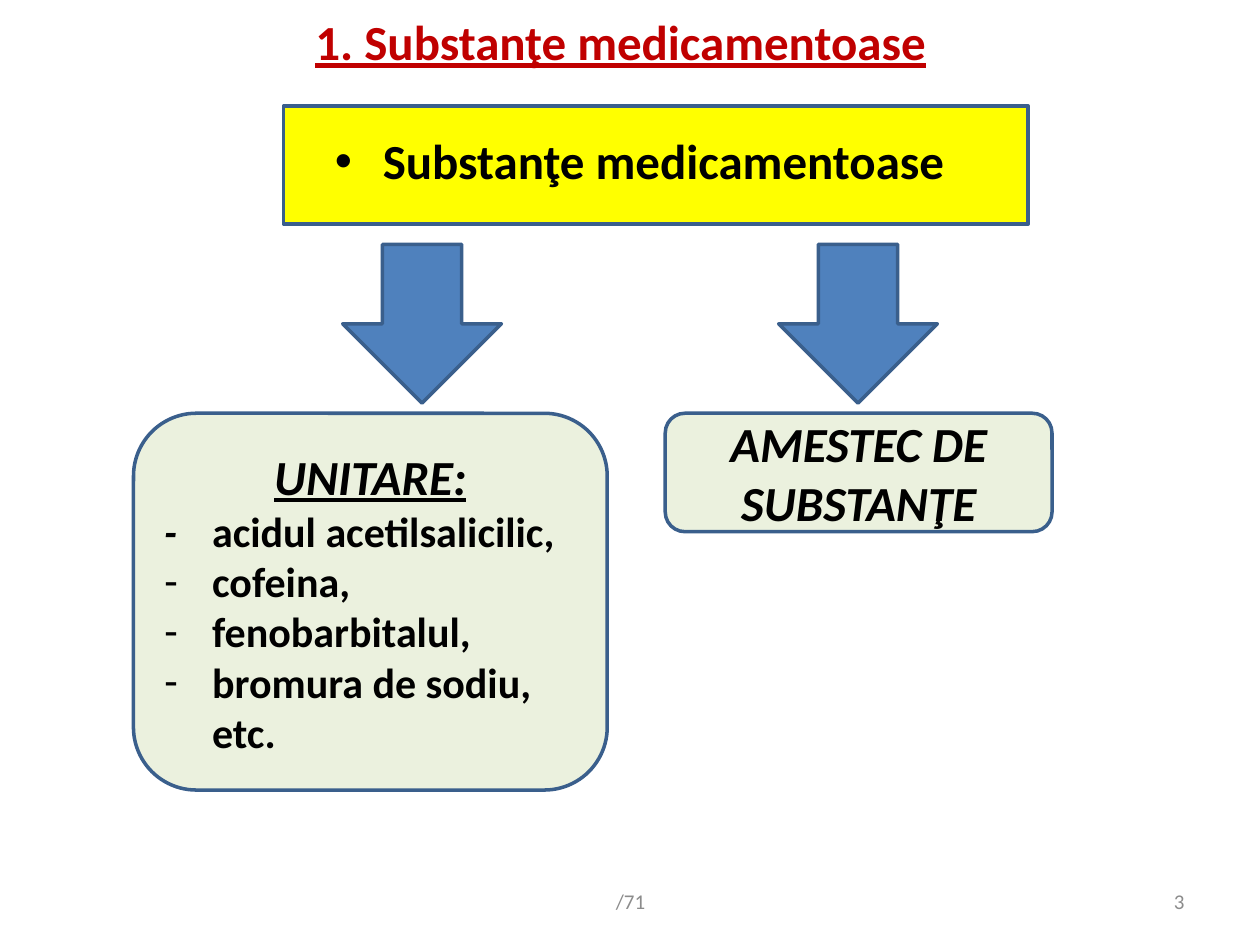
from dataclasses import dataclass

from lxml.etree import SubElement
from pptx import Presentation
from pptx.dml.color import RGBColor
from pptx.enum.shapes import MSO_SHAPE as Shape
from pptx.enum.text import MSO_ANCHOR as Anchor, PP_ALIGN as Align
from pptx.oxml.ns import qn
from pptx.util import Inches, Pt


@dataclass(frozen=True)
class Theme:
    """Colours, font and type sizes of the slide."""
    font: str = "Calibri"
    title: str = "C00000"
    ink: str = "000000"
    muted: str = "8C8C8C"
    banner: str = "FFFF00"
    arrow: str = "4F81BD"
    card: str = "EBF1DE"
    outline: str = "3A5F8C"
    heading_size: int = 28
    list_size: int = 24
    footer_size: int = 12


THEME = Theme()
HANG = 0.38


def style_run(run, size, color=THEME.ink, bold=True, italic=False, underline=False):
    """Format one run in the theme font."""
    font = run.font
    font.name, font.size = THEME.font, Pt(size)
    font.bold, font.italic, font.underline = bold, italic, underline
    font.color.rgb = RGBColor.from_string(color)


def set_hanging(paragraph, bullet=None):
    """Give a paragraph a hanging indent and, if asked, a bullet."""
    properties = paragraph._p.get_or_add_pPr()
    properties.set("marL", str(Inches(HANG)))
    properties.set("indent", str(-Inches(HANG)))
    if bullet:
        SubElement(properties, qn("a:buFont"), typeface="Arial")
        SubElement(properties, qn("a:buChar"), char=bullet)


def add_panel(slide, kind, box, fill):
    """Place a filled, outlined preset shape in the box."""
    panel = slide.shapes.add_shape(kind, *map(Inches, box))
    panel.shadow.inherit = False
    panel.fill.solid()
    panel.fill.fore_color.rgb = RGBColor.from_string(fill)
    panel.line.color.rgb = RGBColor.from_string(THEME.outline)
    panel.line.width = Pt(2)
    return panel


def add_label(slide, box, text, size, align=Align.CENTER, anchor=Anchor.MIDDLE, **style):
    """Place one line of text in the box and return its paragraph."""
    frame = slide.shapes.add_textbox(*map(Inches, box)).text_frame
    frame.word_wrap = True
    frame.vertical_anchor = anchor
    frame.text = text
    line = frame.paragraphs[0]
    line.alignment = align
    style_run(line.runs[0], size, **style)
    return line


def add_banner(slide, box, text_box):
    """Place the yellow banner and its bulleted heading."""
    add_panel(slide, Shape.RECTANGLE, box, THEME.banner)
    heading = add_label(slide, text_box, "Substanţe medicamentoase",
                        THEME.heading_size, anchor=Anchor.TOP)
    set_hanging(heading, "•")


def add_card(slide, box, heading, underline=False):
    """Place a rounded card with an italic heading and return its text frame."""
    frame = add_panel(slide, Shape.ROUNDED_RECTANGLE, box, THEME.card).text_frame
    frame.word_wrap = True
    frame.vertical_anchor = Anchor.MIDDLE
    frame.text = heading
    title = frame.paragraphs[0]
    title.alignment = Align.CENTER
    style_run(title.runs[0], THEME.heading_size, italic=True, underline=underline)
    return frame


def add_unit_card(slide, box):
    """Place the card that lists the unitary substances."""
    frame = add_card(slide, box, "UNITARE:", underline=True)
    first = frame.add_paragraph()
    first.alignment = Align.LEFT
    set_hanging(first)
    for text, italic in (("-\t", True), ("acidul acetilsalicilic,", False)):
        run = first.add_run()
        run.text = text
        style_run(run, THEME.list_size, italic=italic)
    for substance in ("cofeina,", "fenobarbitalul,", "bromura de sodiu, etc."):
        item = frame.add_paragraph()
        item.text = substance
        item.alignment = Align.LEFT
        set_hanging(item, "-")
        style_run(item.runs[0], THEME.list_size)


def build_slide(slide):
    """Lay out the whole classification slide."""
    add_banner(slide, (2.25, 0.84, 5.91, 0.94), (0.5, 0.99, 9.15, 6.22))
    add_label(slide, (0.2, 0.05, 9.45, 0.55), "1. Substanţe medicamentoase",
              THEME.heading_size, color=THEME.title, underline=True)
    for left in (2.72, 6.18):
        add_panel(slide, Shape.DOWN_ARROW, (left, 1.94, 1.26, 1.26), THEME.arrow)
    add_unit_card(slide, (1.06, 3.28, 3.76, 2.99))
    add_card(slide, (5.28, 3.28, 3.07, 0.94), "AMESTEC DE SUBSTANŢE")
    for box, text, align in (((3.42, 6.95, 3.17, 0.4), "/71", Align.CENTER),
                             ((7.17, 6.95, 2.33, 0.4), "3", Align.RIGHT)):
        add_label(slide, box, text, THEME.footer_size, align,
                  color=THEME.muted, bold=False)


def main():
    """Build and save the presentation."""
    deck = Presentation()
    deck.slide_width, deck.slide_height = Inches(10), Inches(7.5)
    build_slide(deck.slides.add_slide(deck.slide_layouts[6]))
    deck.save("out.pptx")


if __name__ == "__main__":
    main()
